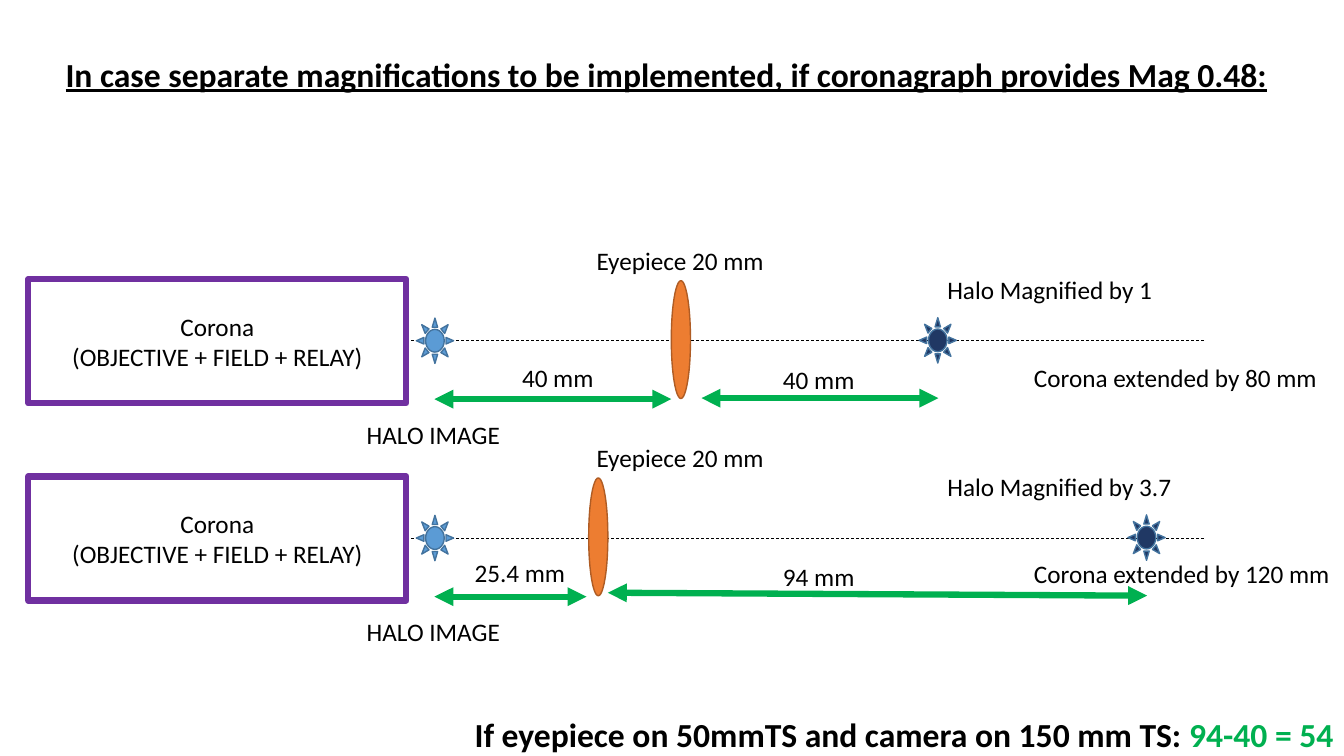
from lxml import etree
from pptx import Presentation
from pptx import util as u
from pptx.dml.color import RGBColor
from pptx.enum import dml, shapes, text
from pptx.oxml.ns import qn

BLACK, GREEN, PURPLE = "000000", "00B050", "7030A0"
LENS_ORANGE, LENS_EDGE = "ED7D31", "AF5C24"
HALO_BLUE, IMAGE_NAVY, SUN_EDGE = "5B9BD5", "203864", "43739E"


def color(target, value):
    """Apply a hex colour to a fill, a font or a line's fill."""
    if hasattr(target, "solid"):
        target.solid()
        target = target.fore_color
    else:
        target = target.color
    target.rgb = RGBColor.from_string(value)


def add_label(slide, left, top, width, content, size=18, height=29):
    """Add one unwrapped line of text and return its paragraph."""
    box = slide.shapes.add_textbox(u.Pt(left), u.Pt(top), u.Pt(width), u.Pt(height))
    box.text_frame.word_wrap = False
    paragraph = box.text_frame.paragraphs[0]
    paragraph.add_run().text = content
    paragraph.font.size = u.Pt(size)
    paragraph.font.name = "Calibri"
    color(paragraph.font, BLACK)
    return paragraph


presentation = Presentation()
presentation.slide_width, presentation.slide_height = u.Pt(960), u.Pt(540)
slide = presentation.slides.add_slide(presentation.slide_layouts[5])

# Title
title = slide.shapes.title
title.left, title.top, title.width, title.height = u.Pt(39.6), u.Pt(34.6), u.Pt(893.5), u.Pt(36)
title.text = "In case separate magnifications to be implemented, if coronagraph provides Mag 0.48:"
title.text_frame.vertical_anchor = text.MSO_ANCHOR.TOP
title.text_frame.auto_size = text.MSO_AUTO_SIZE.NONE
heading = title.text_frame.paragraphs[0]
heading.alignment = text.PP_ALIGN.LEFT
heading.font.name, heading.font.size = "Calibri", u.Pt(24)
heading.font.bold = heading.font.underline = True
color(heading.font, BLACK)

# Two optical layouts; all heights are relative to the optical axis
setups = [
    {"axis": 243.4, "lens": 479.5, "image": 656.6,
     "arrows": [(310.3, 41.7, 479.5, 41.7), (501.1, 41, 670.3, 41)],
     "labels": [(365.8, 11.5, 66.2, "40 mm"), (552.2, 13, 66.2, "40 mm"),
                (669.6, -51, 162.7, "Halo Magnified by 1"),
                (731.5, 11.5, 218.9, "Corona extended by 80 mm")]},
    {"axis": 384.3, "lens": 420.5, "image": 805.7,
     "arrows": [(310.3, 41.9, 419, 41.9), (434.2, 39.1, 819.4, 41.2)],
     "labels": [(331.9, 10.3, 79.9, "25.4 mm"), (552.2, 13.1, 66.2, "94 mm"),
                (669.6, -51, 176.4, "Halo Magnified by 3.7"),
                (731.5, 11, 228.2, "Corona extended by 120 mm")]},
]
shared_labels = [(254.9, 52.4, 110.9, "HALO IMAGE"), (419, -72, 135.4, "Eyepiece 20 mm")]
kinds = shapes.MSO_SHAPE

for setup in setups:
    axis = setup["axis"]

    # Optical axis and distance arrows
    lines = [(290.2, 0, 861.1, 0)] + setup["arrows"]
    for index, (start_x, start_y, end_x, end_y) in enumerate(lines):
        connector = slide.shapes.add_connector(
            shapes.MSO_CONNECTOR.STRAIGHT, u.Pt(start_x), u.Pt(axis + start_y),
            u.Pt(end_x), u.Pt(axis + end_y))
        color(connector.line.fill, GREEN if index else BLACK)
        connector.line.width = u.Pt(4.5 if index else 0.5)
        if index:
            line_xml = connector.line._get_or_add_ln()
            for end in ("a:headEnd", "a:tailEnd"):
                etree.SubElement(line_xml, qn(end), type="triangle")
        else:
            connector.line.dash_style = dml.MSO_LINE.DASH
        etree.SubElement(connector._element.spPr, qn("a:effectLst"))

    # Coronagraph box, halo, eyepiece lens and halo image
    parts = [
        (kinds.RECTANGLE, 20.2, -44, 270, 88.6, None, PURPLE, 4.5),
        (kinds.SUN, 297.4, -16.2, 26.6, 32.4, HALO_BLUE, SUN_EDGE, 1),
        (kinds.OVAL, setup["lens"], -42.9, 13.7, 84.2, LENS_ORANGE, LENS_EDGE, 1),
        (kinds.SUN, setup["image"], -16.5, 26.6, 32.4, IMAGE_NAVY, SUN_EDGE, 1),
    ]
    for kind, left, top, width, height, fill, edge, weight in parts:
        shape = slide.shapes.add_shape(
            kind, u.Pt(left), u.Pt(axis + top), u.Pt(width), u.Pt(height))
        shape.shadow.inherit = False
        color(shape.line.fill, edge)
        shape.line.width = u.Pt(weight)
        if fill:
            color(shape.fill, fill)
            continue
        shape.fill.background()
        shape.text_frame.text = "Corona\n(OBJECTIVE + FIELD + RELAY)"
        shape.text_frame.vertical_anchor = text.MSO_ANCHOR.MIDDLE
        for paragraph in shape.text_frame.paragraphs:
            paragraph.alignment = text.PP_ALIGN.CENTER
            paragraph.font.name, paragraph.font.size = "Calibri", u.Pt(18)
            color(paragraph.font, BLACK)

    # Labels
    for left, top, width, content in shared_labels + setup["labels"]:
        add_label(slide, left, axis + top, width, content)

# Conclusion
conclusion = add_label(slide, 331.9, 506.2, 632.9,
                       "If eyepiece on 50mmTS and camera on 150 mm TS:", 24, 36)
conclusion.font.bold = True
result = conclusion.add_run()
result.text = " 94-40 = 54"
color(result.font, GREEN)

presentation.save("out.pptx")
